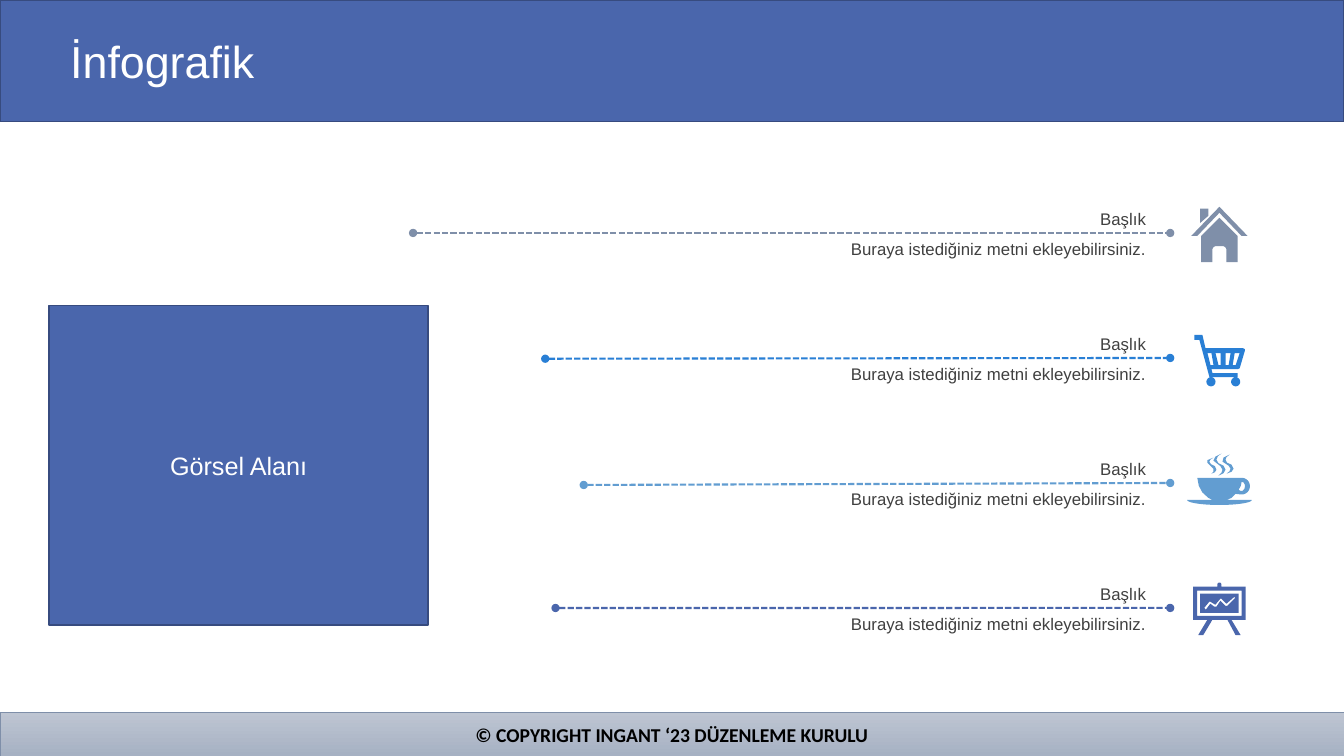
import math

from lxml import etree
from pptx import Presentation
from pptx import util as u
from pptx.dml.color import RGBColor
from pptx.enum import dml, shapes, text
from pptx.oxml.ns import qn

BLUE, NAVY, SLATE = "4A66AC", "374B7F", "7F8FA9"
WHITE, GREY, BLACK = "FFFFFF", "404040", "000000"


def paint(fill, *colours):
    """Fill with one colour, or with a gradient from the top colour to the bottom one."""
    if len(colours) == 1:
        fill.solid()
        fill.fore_color.rgb = RGBColor.from_string(colours[0])
        return
    fill.gradient()
    fill.gradient_angle = 270
    for stop, colour in zip(fill.gradient_stops, colours):
        stop.color.rgb = RGBColor.from_string(colour)


def arc(x, y, width, height, start, end):
    """Points on an ellipse with the given centre and half axes, between two angles in degrees."""
    angles = [math.radians(start + (end - start) * step / 24) for step in range(25)]
    return [(x + width * math.cos(a), y + height * math.sin(a)) for a in angles]


# Icon outlines, in hundredths of an inch; an inner outline cuts a hole.
house = [
    [(28, 11), (46, 29), (46, 55), (35, 55), *arc(31, 43, 4, 4, 0, -90),
     *arc(25, 43, 4, 4, -90, -180), (21, 55), (10, 55), (10, 29)],
    [(9, 2), (17, 2), (17, 9), (9, 16)],
    [(28, 0), (56, 29), (50, 29), (28, 6), (6, 29), (0, 29)],
]
cart = [
    [(0, 0), (8, 0), (11, 13), (48, 13), (50, 14), (50, 16), (45, 33), (43, 34), (17, 34),
     (18, 38), (43, 38), (43, 42), (15, 42), (5, 5), (0, 5)],
    [(40, 18), (38, 30), (41, 30), (45, 18)],
    [(31, 18), (31, 30), (34, 30), (36, 18)],
    [(21, 18), (24, 30), (26, 30), (26, 18)],
    [(13, 18), (16, 30), (19, 30), (17, 18)],
    arc(16.5, 46.5, 4.5, 4.5, 0, 360),
    arc(41, 46.5, 4.5, 4.5, 0, 360),
]
cup = [
    [(10, 24), *arc(54, 32.3, 8.2, 8.3, -90, 100), (48, 40), (44, 44), (39, 46),
     *arc(32, 46, 32, 5, 0, 180), (25, 46), (21, 44), (15, 38.5), (11.5, 32)],
    [(54, 28), (53.2, 32), (51, 36), (53, 37), (55, 37), (57, 34.5), (57.3, 31), (56, 28.7)],
    [(26, 4), (23, 6), (22, 8), (23.5, 10.5), (27.5, 12.5), (29, 16), (27.5, 18.5), (24, 20),
     (26, 18), (26, 15), (23.5, 12.5), (20, 9), (20, 6.5)],
    [(42, 1), (39, 3.5), (38, 6), (39.5, 9), (44, 11), (46, 15), (44, 18), (39, 20),
     (42, 17.5), (43, 15), (41, 12), (35, 8), (36, 4)],
    [(34, 0), (30.5, 2.5), (29, 6), (31, 9.5), (36, 12), (38, 16), (36, 19.5), (31, 22),
     (34, 19), (35, 16), (33, 12.5), (26, 7), (28, 3)],
]
board = [
    [*arc(26, 2, 2, 2, 180, 360), (28, 4), (52, 4), (52, 37), (38, 37), (47, 52), (42, 52),
     (34, 37), (19, 37), (10, 52), (5, 52), (14, 37), (0, 37), (0, 4), (24, 4)],
    [(4, 8), (48, 8), (48, 33), (4, 33)],
    [(7, 11), (45, 11), (45, 30), (7, 30)],
    [(41, 14), (33, 21), (28, 16), (27, 16), (22, 22), (17, 19), (16, 19), (11, 25), (12.5, 27),
     (17, 21), (21, 24), (23, 24), (27, 18), (32, 23), (34, 23), (41.5, 15.5)],
]

deck = Presentation()
deck.slide_width, deck.slide_height = u.Cm(33.87), u.Cm(19.05)
page = deck.slides.add_slide(deck.slide_layouts[6])

# Bands and image area: left, top, width, height, fill, line colour, line width
panels = []
for *place, fill, edge, weight in [
    (0, 0, 33.87, 3.07, [BLUE], NAVY, 1),
    (0, 17.96, 33.87, 1.09, ["BEC5D2", "A6B1C3"], SLATE, 0.5),
    (1.24, 7.7, 9.55, 8.05, [BLUE], NAVY, 1),
]:
    panel = page.shapes.add_shape(shapes.MSO_SHAPE.RECTANGLE, *map(u.Cm, place))
    panel.shadow.inherit = False
    paint(panel.fill, *fill)
    paint(panel.line.fill, edge)
    panel.line.width = u.Pt(weight)
    panels.append(panel)
header, footer, image_area = panels

LEFT, CENTER, RIGHT = text.PP_ALIGN.LEFT, text.PP_ALIGN.CENTER, text.PP_ALIGN.RIGHT
TOP, MIDDLE = text.MSO_ANCHOR.TOP, text.MSO_ANCHOR.MIDDLE
title = page.shapes.add_textbox(*map(u.Cm, (1.52, 0.61, 31.52, 2.01)))
labels = [
    (title, "İnfografik", LEFT, MIDDLE, WHITE, {"size": u.Pt(32), "name": "Arial"}),
    (footer, "© COPYRIGHT INGANT ‘23 DÜZENLEME KURULU", CENTER, MIDDLE, BLACK,
     {"size": u.Pt(14), "name": "Calibri", "bold": True}),
    (image_area, "Görsel Alanı", CENTER, MIDDLE, WHITE, {"size": u.Pt(18), "name": "Arial"}),
]

# Rows: colour, line start, heading left, body left, icon outlines, icon left and top
ROW_TOP, ROW_PITCH, TEXT_RIGHT, LINE_END = 5.13, 3.15, 29.13, 29.49
rows = [
    (SLATE, (10.41, 5.87), 10.8, 10.8, house, (30.02, 5.21)),
    ("297FD5", (13.74, 9.04), 15.01, 15.01, cart, (30.1, 8.44)),
    ("629DD1", (14.71, 12.22), 14.48, 14.53, cup, (29.92, 11.43)),
    (BLUE, (14, 15.32), 18.42, 13.74, board, (30.07, 14.68)),
]
for index, (colour, start, heading_left, body_left, outlines, corner) in enumerate(rows):
    top = ROW_TOP + index * ROW_PITCH
    for words, left, drop in [
        ("Başlık", heading_left, 0),
        ("Buraya istediğiniz metni ekleyebilirsiniz.", body_left, 0.76),
    ]:
        box = page.shapes.add_textbox(*map(u.Cm, (left, top + drop, TEXT_RIGHT - left, 0.76)))
        labels.append((box, words, RIGHT, TOP, GREY, {"size": u.Pt(12), "name": "Arial"}))

    leader = page.shapes.add_connector(
        shapes.MSO_CONNECTOR.STRAIGHT, *map(u.Cm, (*start, LINE_END, top + 0.74)))
    paint(leader.line.fill, colour)
    leader.line.width = u.Pt(1.5)
    leader.line.dash_style = dml.MSO_LINE.SQUARE_DOT
    for end in ("a:headEnd", "a:tailEnd"):
        etree.SubElement(leader.line._get_or_add_ln(), qn(end), type="oval")
    etree.SubElement(leader._element.spPr, qn("a:effectLst"))

    builder = None
    for outline in outlines:
        points = [(x * 100, y * 100) for x, y in outline]
        if builder is None:
            builder = page.shapes.build_freeform(*points[0], scale=u.Cm(2.54) / 10000)
        else:
            builder.move_to(*points[0])
        builder.add_line_segments(points[1:], close=True)
    icon = builder.convert_to_shape(*map(u.Cm, corner))
    icon.shadow.inherit = False
    paint(icon.fill, colour)
    icon.line.fill.background()

for box, words, align, anchor, colour, style in labels:
    frame = box.text_frame
    frame.word_wrap = True
    frame.vertical_anchor = anchor
    para = frame.paragraphs[0]
    para.alignment = align
    span = para.add_run()
    span.text = words
    paint(span.font.fill, colour)
    for key, value in style.items():
        setattr(span.font, key, value)
title.text_frame.paragraphs[0].line_spacing = 0.9

deck.save("out.pptx")
